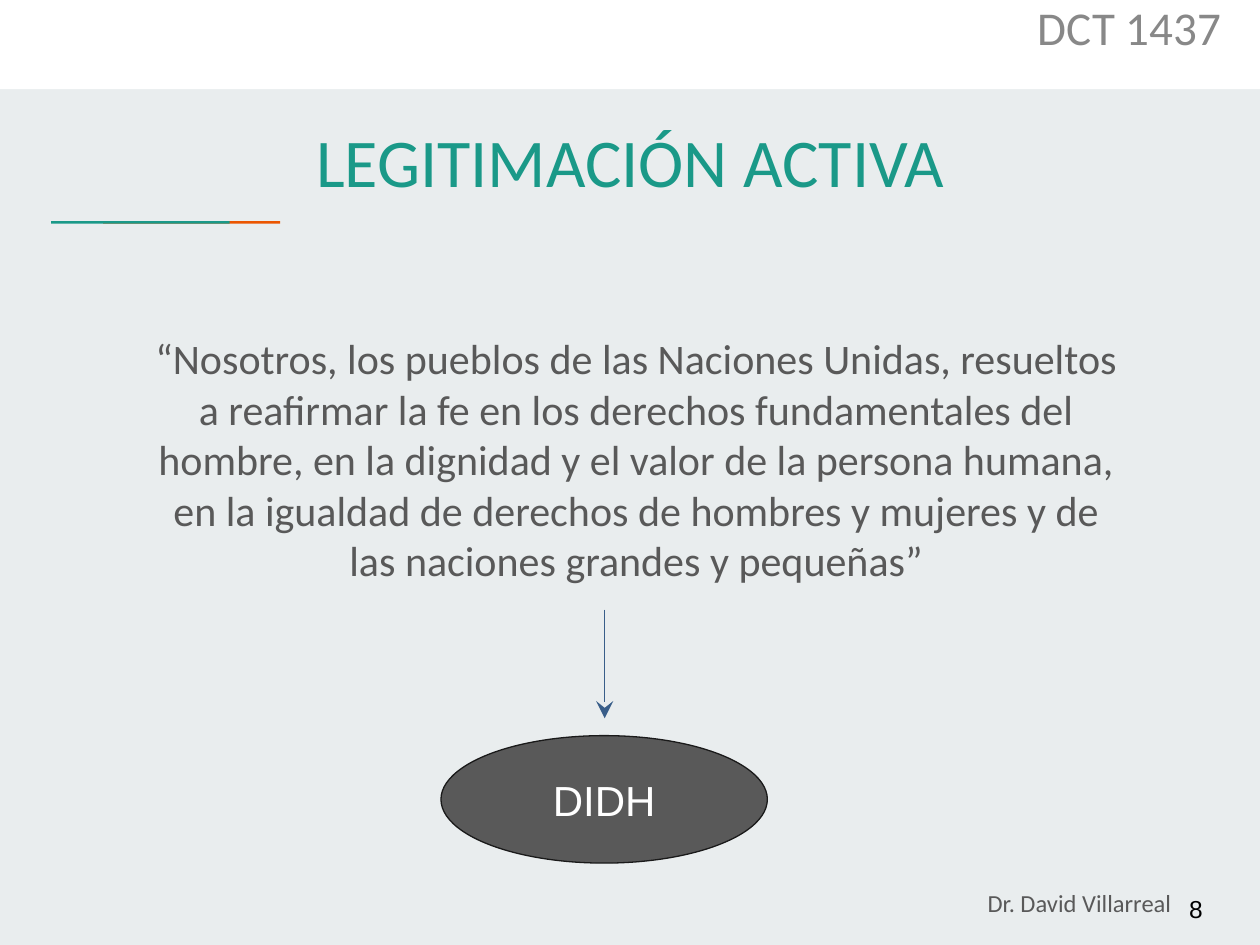
"""Build the slide on active standing: a quotation leading to the DIDH ellipse."""
from dataclasses import dataclass

from lxml.etree import SubElement
from pptx import Presentation
from pptx.dml.color import RGBColor
from pptx.enum.shapes import MSO_CONNECTOR, MSO_SHAPE
from pptx.enum.text import MSO_ANCHOR as Anchor, PP_ALIGN as Align
from pptx.oxml.ns import qn
from pptx.util import Cm, Pt


@dataclass(frozen=True)
class Theme:
    background: str = "E9EDEE"
    white: str = "FFFFFF"
    black: str = "000000"
    teal: str = "1A9988"
    orange: str = "EB5600"
    gray: str = "595959"
    light_gray: str = "888888"
    outline: str = "1A1A1A"
    arrow: str = "395E89"
    heading_font: str = "Calibri"
    plain_font: str = "Arial"
    title_size: float = 39
    course_size: float = 26.9
    body_size: float = 24
    small_size: float = 14
    line_width: float = 0.75


theme = Theme()


def add_filled_shape(kind, box, color):
    shape = slide.shapes.add_shape(kind, *map(Cm, box))
    shape.shadow.inherit = False
    shape.fill.solid()
    shape.fill.fore_color.rgb = RGBColor.from_string(color)
    shape.line.fill.background()
    return shape


def write_text(shape, text, font, size, color, align, anchor, inset=0.13):
    frame = shape.text_frame
    frame.word_wrap = True
    frame.vertical_anchor = anchor
    frame.margin_left = frame.margin_right = Cm(0.25)
    frame.margin_top = frame.margin_bottom = Cm(inset)
    frame.text = text
    paragraph = frame.paragraphs[0]
    paragraph.alignment = align
    run_font = paragraph.runs[0].font
    run_font.name = font
    run_font.size = Pt(size)
    run_font.color.rgb = RGBColor.from_string(color)
    return paragraph


presentation = Presentation()
presentation.slide_width, presentation.slide_height = Cm(25.4), Cm(19.05)
slide = presentation.slides.add_slide(presentation.slide_layouts[6])
slide.background.fill.solid()
slide.background.fill.fore_color.rgb = RGBColor.from_string(theme.background)

for box, color in [
    ((0, 0, 25.4, 1.8), theme.white),
    ((2.08, 4.46, 3.57, 0.05), theme.orange),
    ((1.03, 4.46, 3.6, 0.05), theme.teal),
]:
    add_filled_shape(MSO_SHAPE.RECTANGLE, box, color)

quote = (
    "“Nosotros, los pueblos de las Naciones Unidas, resueltos a reafirmar la fe "
    "en los derechos fundamentales del hombre, en la dignidad y el valor de la "
    "persona humana, en la igualdad de derechos de hombres y mujeres y de las "
    "naciones grandes y pequeñas”"
)
heading, plain = theme.heading_font, theme.plain_font
texts = [
    ((2.03, 0.03, 21.36, 6.17), "LEGITIMACIÓN ACTIVA", heading, theme.title_size,
     theme.teal, Align.CENTER, Anchor.MIDDLE, 0.13, 1.15, 0),
    ((2.74, 6.58, 20.17, 2.46), quote, heading, theme.body_size,
     theme.gray, Align.CENTER, Anchor.TOP, 0.13, 1.0, 0),
    ((23.72, 17.6, 1.52, 1.45), "8", plain, theme.small_size,
     theme.black, Align.LEFT, Anchor.MIDDLE, 0.13, 1.0, 0),
    ((19.58, 0.05, 6.38, 1.45), "DCT 1437", heading, theme.course_size,
     theme.light_gray, Align.CENTER, Anchor.TOP, 0.13, 0.8, 5.4),
    ((19.66, 17.65, 6.58, 0.76), "Dr. David Villarreal", heading, theme.small_size,
     theme.gray, Align.LEFT, Anchor.TOP, 0.25, 1.0, 0),
]
for box, text, font, size, color, align, anchor, inset, spacing, before in texts:
    text_box = slide.shapes.add_textbox(*map(Cm, box))
    paragraph = write_text(text_box, text, font, size, color, align, anchor, inset)
    paragraph.line_spacing = spacing
    paragraph.space_before = Pt(before)

arrow = slide.shapes.add_connector(
    MSO_CONNECTOR.STRAIGHT, Cm(12.19), Cm(12.29), Cm(12.19), Cm(14.48)
)
arrow.line.color.rgb = RGBColor.from_string(theme.arrow)
arrow.line.width = Pt(theme.line_width)
SubElement(arrow.line._get_or_add_ln(), qn("a:tailEnd"), type="stealth", w="lg", len="lg")
SubElement(arrow._element.spPr, qn("a:effectLst"))

ellipse = add_filled_shape(MSO_SHAPE.OVAL, (8.89, 14.83, 6.58, 2.57), theme.gray)
ellipse.line.color.rgb = RGBColor.from_string(theme.outline)
ellipse.line.width = Pt(theme.line_width)
write_text(ellipse, "DIDH", plain, theme.body_size, theme.white,
           Align.CENTER, Anchor.MIDDLE, 0.25)

presentation.save("out.pptx")
